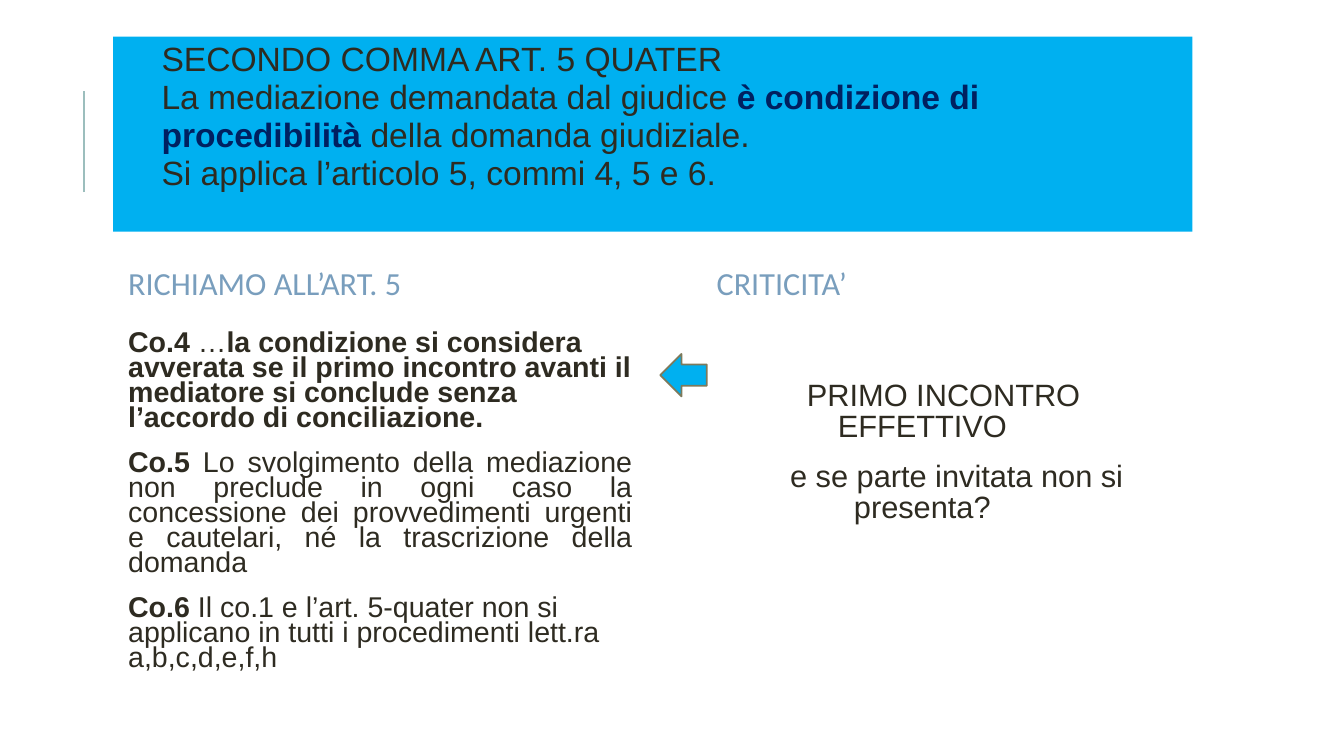
from dataclasses import dataclass

from lxml import etree
from pptx import Presentation
from pptx.dml.color import RGBColor
from pptx.enum.shapes import MSO_CONNECTOR, MSO_SHAPE
from pptx.enum.text import MSO_ANCHOR, PP_ALIGN
from pptx.oxml.ns import qn
from pptx.util import Cm, Pt


@dataclass(frozen=True)
class Theme:
    ink: RGBColor = RGBColor(0x2E, 0x2B, 0x21)
    navy: RGBColor = RGBColor(0x00, 0x20, 0x60)
    sky: RGBColor = RGBColor(0x00, 0xB0, 0xF0)
    heading: RGBColor = RGBColor(0x79, 0x9E, 0xBD)
    rule: RGBColor = RGBColor(0x9C, 0xBE, 0xBD)
    outline: RGBColor = RGBColor(0x7D, 0x7A, 0x5C)
    body_font: str = "Arial"
    heading_font: str = "Calibri"
    title_size: Pt = Pt(24)
    heading_size: Pt = Pt(23)
    clause_size: Pt = Pt(20.4)
    issue_size: Pt = Pt(22)


theme = Theme()


def add_text_area(left, top, width, height, side_inset, anchor):
    frame = slide.shapes.add_textbox(Cm(left), Cm(top), Cm(width), Cm(height)).text_frame
    frame.word_wrap = True
    frame.vertical_anchor = anchor
    frame.margin_left = frame.margin_right = Cm(side_inset)
    return frame


def write_paragraph(paragraph, runs, size, spacing, font=theme.body_font,
                    color=theme.ink, before=0, after=0):
    """Fill a paragraph from (text, bold) pairs; a newline is a line break."""
    for text, bold in runs:
        for index, line in enumerate(text.split("\n")):
            if index:
                paragraph.add_line_break()
            if line:
                run = paragraph.add_run()
                run.text = line
                run.font.bold = bold
    paragraph.font.name = font
    paragraph.font.size = size
    paragraph.font.color.rgb = color
    paragraph.line_spacing = spacing
    paragraph.space_before = Pt(before)
    paragraph.space_after = Pt(after)


prs = Presentation()
prs.slide_width, prs.slide_height = Cm(33.87), Cm(19.05)
slide = prs.slides.add_slide(prs.slide_layouts[5])

# Side rule
side_rule = slide.shapes.add_connector(
    MSO_CONNECTOR.STRAIGHT, Cm(2.12), Cm(4.84), Cm(2.12), Cm(2.3))
side_rule.line.color.rgb = theme.rule
side_rule.line.width = Pt(1.5)
etree.SubElement(side_rule._element.spPr, qn("a:effectLst"))

# Title band
title = slide.shapes.title
title.left, title.top, title.width, title.height = Cm(2.85), Cm(0.92), Cm(27.2), Cm(4.92)
title.fill.solid()
title.fill.fore_color.rgb = theme.sky
title.text_frame.vertical_anchor = MSO_ANCHOR.TOP
title.text_frame.margin_left = Cm(1.22)
title_line = title.text_frame.paragraphs[0]
title_line.alignment = PP_ALIGN.LEFT
write_paragraph(title_line, [
    ("SECONDO COMMA ART. 5 QUATER\nLa mediazione demandata dal giudice ", False),
    ("è condizione di procedibilità ", True),
    ("della domanda giudiziale.\nSi applica l’articolo 5, commi 4, 5 e 6.", False),
], theme.title_size, 0.94)
for run in title_line.runs:
    if run.font.bold:
        run.font.color.rgb = theme.navy

# Column headings
for heading, left in (("RICHIAMO ALL’ART. 5", 2.85), ("CRITICITA’", 17.68)):
    frame = add_text_area(left, 6.05, 12.37, 2.29, 0.38, MSO_ANCHOR.MIDDLE)
    write_paragraph(frame.paragraphs[0], [(heading, False)], theme.heading_size, 0.9,
                    theme.heading_font, theme.heading)

# Clauses of article 5
clauses = [
    ([("Co.4", True), (" …", False),
      ("la condizione si considera avverata se il primo incontro avanti il mediatore "
       "si conclude senza l’accordo di conciliazione.", True)], PP_ALIGN.LEFT),
    ([("Co.5 ", True),
      ("Lo svolgimento della mediazione non preclude in ogni caso la concessione dei "
       "provvedimenti urgenti e cautelari, né la trascrizione della domanda", False)],
     PP_ALIGN.JUSTIFY),
    ([("Co.6", True),
      (" Il co.1 e l’art. 5-quater non si applicano in tutti i procedimenti lett.ra "
       "a,b,c,d,e,f,h", False)], PP_ALIGN.LEFT),
]
clause_frame = add_text_area(2.85, 8.26, 13.21, 9.27, 0.13, MSO_ANCHOR.TOP)
clause_frame.margin_left = Cm(0.38)
for index, (runs, alignment) in enumerate(clauses):
    paragraph = clause_frame.add_paragraph() if index else clause_frame.paragraphs[0]
    paragraph.alignment = alignment
    write_paragraph(paragraph, runs, theme.clause_size, 0.73, before=12 if index else 0, after=2)

# Critical issues: centred, with the first line shifted to the right
issues = [("PRIMO INCONTRO\nEFFETTIVO", 1.07), ("e se parte invitata non si presenta?", 1.73)]
issue_frame = add_text_area(16.64, 9.5, 13.21, 3.9, 0.13, MSO_ANCHOR.TOP)
for index, (issue, first_indent) in enumerate(issues):
    paragraph = issue_frame.add_paragraph() if index else issue_frame.paragraphs[0]
    paragraph.alignment = PP_ALIGN.CENTER
    write_paragraph(paragraph, [(issue, False)], theme.issue_size, 0.83,
                    before=12 if index else 0, after=2)
    paragraph._p.get_or_add_pPr().set("indent", str(Cm(first_indent)))

# Arrow from the issues back to the clauses
arrow = slide.shapes.add_shape(MSO_SHAPE.LEFT_ARROW, Cm(16.64), Cm(8.92), Cm(1.17), Cm(1.07))
arrow.shadow.inherit = False
arrow.fill.solid()
arrow.fill.fore_color.rgb = theme.sky
arrow.line.color.rgb = theme.outline
arrow.line.width = Pt(1.25)

prs.save("out.pptx")
